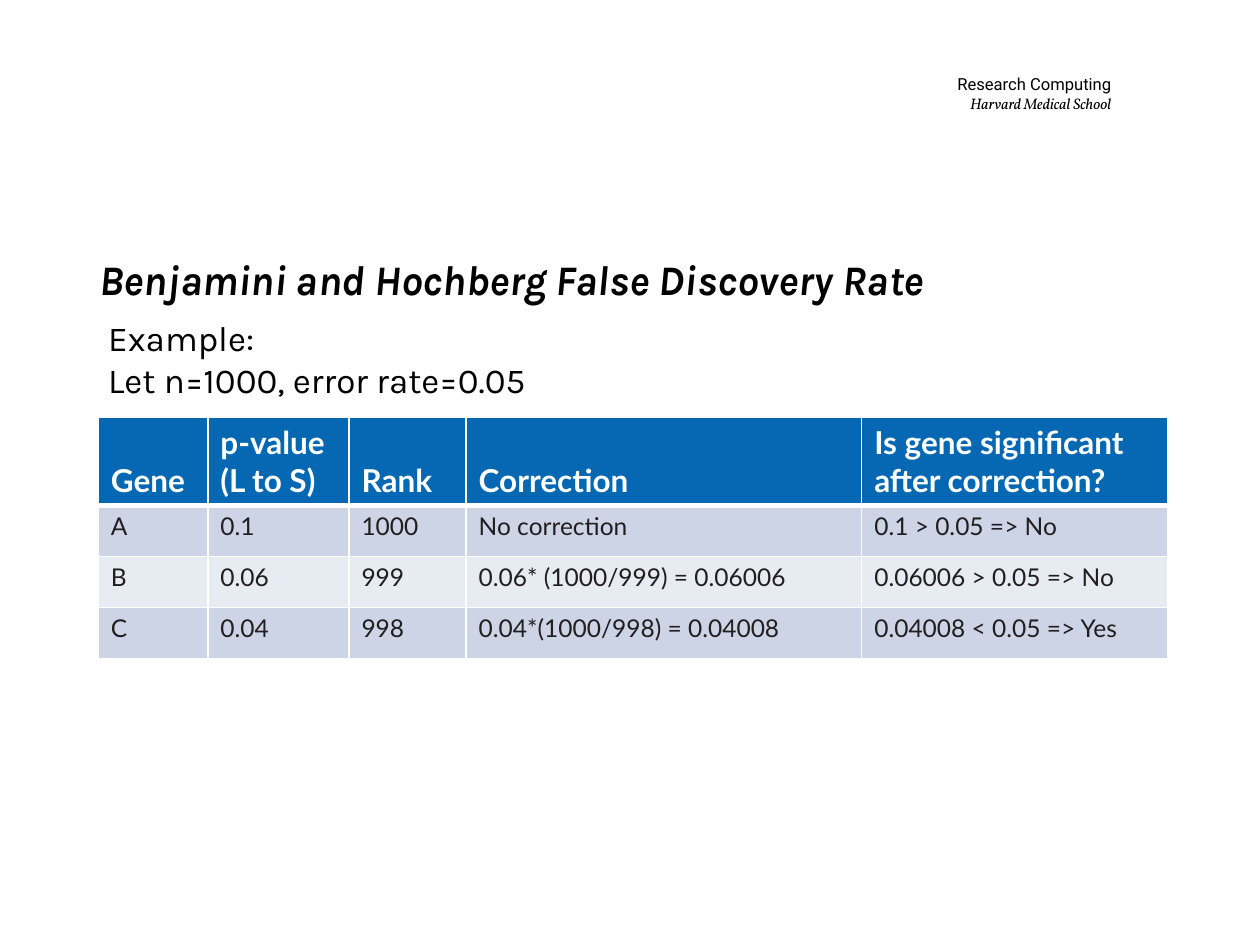
from lxml.etree import SubElement
from pptx import Presentation
from pptx.dml.color import RGBColor
from pptx.enum.text import MSO_ANCHOR, PP_ALIGN
from pptx.oxml.ns import qn
from pptx.util import Inches, Pt

COLS, ROWS = 100, 75  # grid units across and down the slide

HEADERS = ["Gene", "p-value (L to S)", "Rank", "Correction",
           "Is gene significant after correction?"]
GENES = [
    ["A", "0.1", "1000", "No correction", "0.1 > 0.05 => No"],
    ["B", "0.06", "999", "0.06* (1000/999) = 0.06006", "0.06006 > 0.05 => No"],
    ["C", "0.04", "998", "0.04*(1000/998) = 0.04008", "0.04008 < 0.05 => Yes"],
]


def rgb(color):
    return RGBColor.from_string(color)


class SlideBuilder:
    BLACK, WHITE, INK = "000000", "FFFFFF", "221E1F"
    HEADER_FILL, BANDS = "0668B3", ("CCD4E5", "E7EBF2")
    HEADING_FONT, TABLE_FONT = "Karla", "Lato"

    def __init__(self, prs):
        self.slide = prs.slides.add_slide(prs.slide_layouts[6])
        self.col = prs.slide_width / COLS
        self.row = prs.slide_height / ROWS

    def box(self, left, top, width, height):
        """Turn grid units into slide lengths."""
        return (round(left * self.col), round(top * self.row),
                round(width * self.col), round(height * self.row))

    def style(self, p, size, font, color=BLACK, bold=False, italic=False):
        p.font.size, p.font.name = Pt(size), font
        p.font.bold, p.font.italic = bold, italic
        p.font.color.rgb = rgb(color)

    def text(self, place, lines, align=PP_ALIGN.LEFT, anchor=MSO_ANCHOR.TOP):
        """Add a text box; each line is (text, style arguments)."""
        tf = self.slide.shapes.add_textbox(*self.box(*place)).text_frame
        tf.word_wrap, tf.vertical_anchor = True, anchor
        for i, (words, look) in enumerate(lines):
            p = tf.add_paragraph() if i else tf.paragraphs[0]
            p.text, p.alignment = words, align
            self.style(p, **look)
        return tf

    def borders(self, cell, top, bottom):
        """Draw white cell borders; top and bottom widths are in points."""
        tc_pr = cell._tc.get_or_add_tcPr()
        for side, width in zip("LRTB", (1, 1, top, bottom)):
            ln = SubElement(tc_pr, qn(f"a:ln{side}"), w=str(Pt(width)))
            fill = SubElement(ln, qn("a:solidFill"))
            SubElement(fill, qn("a:srgbClr"), val=self.WHITE)

    def cell(self, cell, words, row):
        header = row == 0
        self.borders(cell, 3 if row == 1 else 1, 3 if header else 1)
        cell.fill.solid()
        cell.fill.fore_color.rgb = rgb(
            self.HEADER_FILL if header else self.BANDS[(row - 1) % 2])
        cell.vertical_anchor = MSO_ANCHOR.BOTTOM if header else MSO_ANCHOR.TOP
        cell.text = words
        self.style(cell.text_frame.paragraphs[0], 18 if header else 14,
                   self.TABLE_FONT, self.WHITE if header else self.INK, header)

    def table(self, left, top, widths, heights, data):
        place = self.box(left, top, sum(widths), sum(heights))
        table = self.slide.shapes.add_table(len(data), len(widths), *place).table
        for column, width in zip(table.columns, widths):
            column.width = round(width * self.col)
        for row, height in zip(table.rows, heights):
            row.height = round(height * self.row)
        for r, values in enumerate(data):
            for c, words in enumerate(values):
                self.cell(table.cell(r, c), words, r)


def main():
    prs = Presentation()
    prs.slide_width, prs.slide_height = Inches(10), Inches(7.5)
    s = SlideBuilder(prs)

    tf = s.text((63.7, 4.1, 25.3, 6.6), [
        ("Research Computing", dict(size=9.5, font="Roboto")),
        ("Harvard Medical School", dict(size=8.7, font="Vollkorn", italic=True)),
    ], PP_ALIGN.RIGHT, MSO_ANCHOR.MIDDLE)
    tf.margin_left = tf.margin_right = Inches(0.08)
    tf.margin_top = tf.margin_bottom = Inches(0.04)

    s.table(7.8, 33.1, [8.7, 11.2, 9.3, 31.4, 24.3],
            [6.9] + [4.05] * len(GENES), [HEADERS] + GENES)

    s.text((6.9, 19.6, 85.8, 5), [
        ("Benjamini and Hochberg False Discovery Rate",
         dict(size=24, font=s.HEADING_FONT, bold=True, italic=True))])
    body = dict(size=20, font=s.HEADING_FONT)
    s.text((7.6, 24.6, 46.3, 7.7), [
        ("Example:", body), ("Let n=1000, error rate=0.05", body)])

    prs.save("out.pptx")


if __name__ == "__main__":
    main()
